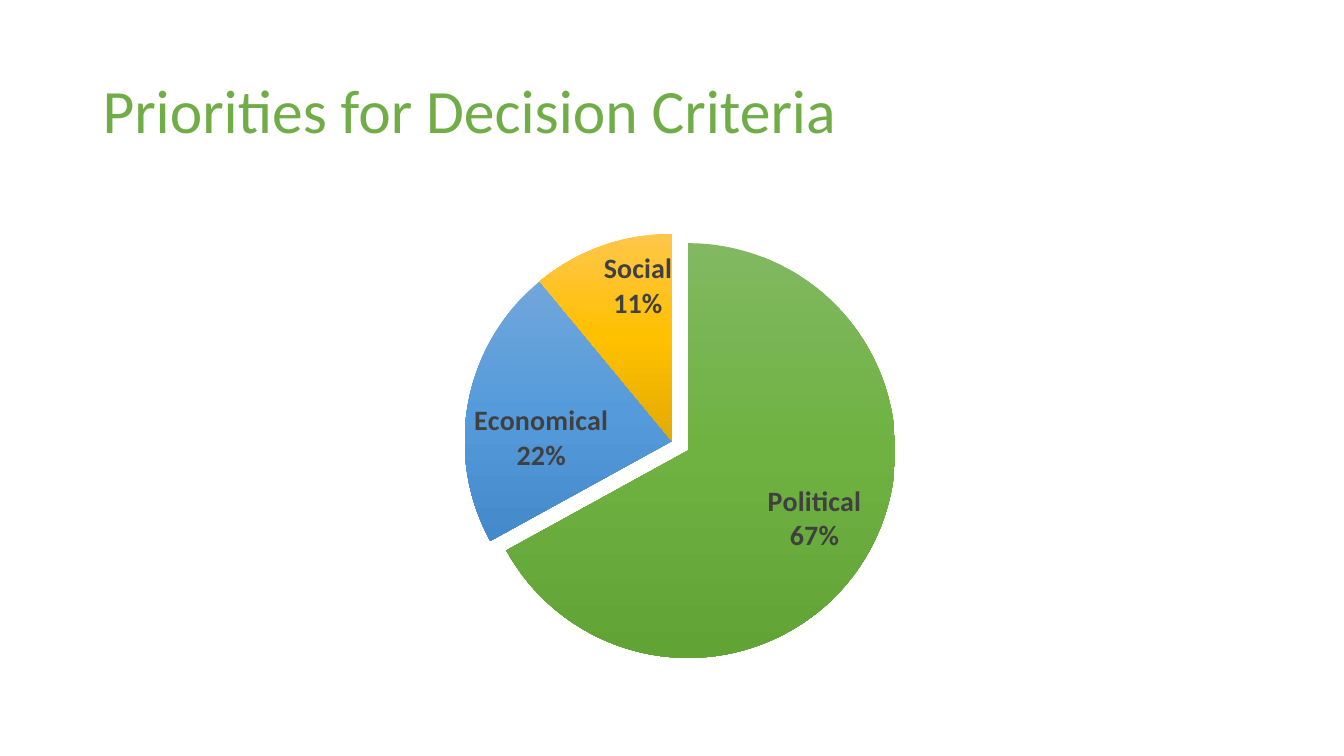
from copy import deepcopy

from lxml.etree import Element
from pptx import Presentation
from pptx.chart.data import CategoryChartData
from pptx.dml.color import RGBColor
from pptx.enum.chart import XL_CHART_TYPE, XL_LABEL_POSITION
from pptx.enum.text import MSO_ANCHOR, PP_ALIGN
from pptx.oxml.ns import qn
from pptx.util import Cm, Pt

GREEN = RGBColor(0x70, 0xAD, 0x47)
DARK_GRAY = RGBColor(0x40, 0x40, 0x40)
POLITICAL_SHADES = (RGBColor(0x81, 0xB8, 0x61), RGBColor(0x6F, 0xB2, 0x42), RGBColor(0x62, 0xA3, 0x36))
ECONOMICAL_SHADES = (RGBColor(0x71, 0xA6, 0xDB), RGBColor(0x55, 0x9B, 0xDB), RGBColor(0x44, 0x8A, 0xCA))
SOCIAL_SHADES = (RGBColor(0xFF, 0xC6, 0x4B), RGBColor(0xFF, 0xC0, 0x00), RGBColor(0xE3, 0xAB, 0x00))
CRITERIA = (
    ("Political", 67, POLITICAL_SHADES),
    ("Economical", 22, ECONOMICAL_SHADES),
    ("Social", 11, SOCIAL_SHADES),
)


class CriteriaSlide:
    """Hold the style and the current slide, and add its elements."""

    font_name = "Calibri"
    left, width = Cm(2.33), Cm(29.21)

    def __init__(self, deck):
        self.slide = deck.slides.add_slide(deck.slide_layouts[5])

    def style_font(self, font, size, color, bold):
        """Apply the slide's typeface with a size, colour and weight."""
        font.name = self.font_name
        font.size = Pt(size)
        font.color.rgb = color
        font.bold = bold

    def add_title(self, wording, top, height):
        """Place and fill the title placeholder."""
        title = self.slide.shapes.title
        title.left, title.top, title.width, title.height = self.left, top, self.width, height
        title.text_frame.vertical_anchor = MSO_ANCHOR.MIDDLE
        heading = title.text_frame.paragraphs[0]
        heading.alignment = PP_ALIGN.LEFT
        heading.line_spacing = 0.9
        run = heading.add_run()
        run.text = wording
        self.style_font(run.font, 44, GREEN, False)

    def shade_slice(self, slice_fill, stop_list, shades):
        """Give a slice a top-to-bottom gradient of evenly spaced shades."""
        for _ in shades[2:]:
            stop_list.append(deepcopy(stop_list[-1]))
        for index, (stop, shade) in enumerate(zip(slice_fill.gradient_stops, shades)):
            stop.position = index / (len(shades) - 1)
            stop.color.rgb = shade
        slice_fill.gradient_angle = 270

    def add_pie(self, criteria, top, height, explosion):
        """Add a labelled pie whose first slice is pulled out."""
        shares = CategoryChartData()
        shares.categories = [name for name, _, _ in criteria]
        shares.add_series("Series 1", [share for _, share, _ in criteria])
        pie = self.slide.shapes.add_chart(
            XL_CHART_TYPE.PIE, self.left, top, self.width, height, shares
        ).chart
        pie.has_title = False
        pie.has_legend = False
        self.style_font(pie.font, 20, DARK_GRAY, True)
        plot = pie.plots[0]
        plot.vary_by_categories = True
        priorities = plot.series[0]
        for index, (_, _, shades) in enumerate(criteria):
            slice_format = priorities.points[index].format
            slice_format.line.fill.background()
            slice_format.fill.gradient()
            slice_xml = priorities._element.findall(qn("c:dPt"))[index]
            self.shade_slice(slice_format.fill, next(slice_xml.iter(qn("a:gsLst"))), shades)
            if index == 0:
                pull = Element(qn("c:explosion"), val=str(explosion))
                slice_xml.find(qn("c:spPr")).addprevious(pull)
        labels = priorities.data_labels
        labels.show_value = False
        labels.show_category_name = True
        labels.show_percentage = True
        labels.position = XL_LABEL_POSITION.INSIDE_END
        self.style_font(labels.font, 20, DARK_GRAY, True)


def main():
    """Build the deck and save it."""
    deck = Presentation()
    deck.slide_width, deck.slide_height = Cm(33.87), Cm(19.05)
    page = CriteriaSlide(deck)
    page.add_title("Priorities for Decision Criteria", Cm(1.01), Cm(3.68))
    page.add_pie(CRITERIA, Cm(5.07), Cm(12.09), explosion=9)
    deck.save("out.pptx")


if __name__ == "__main__":
    main()
